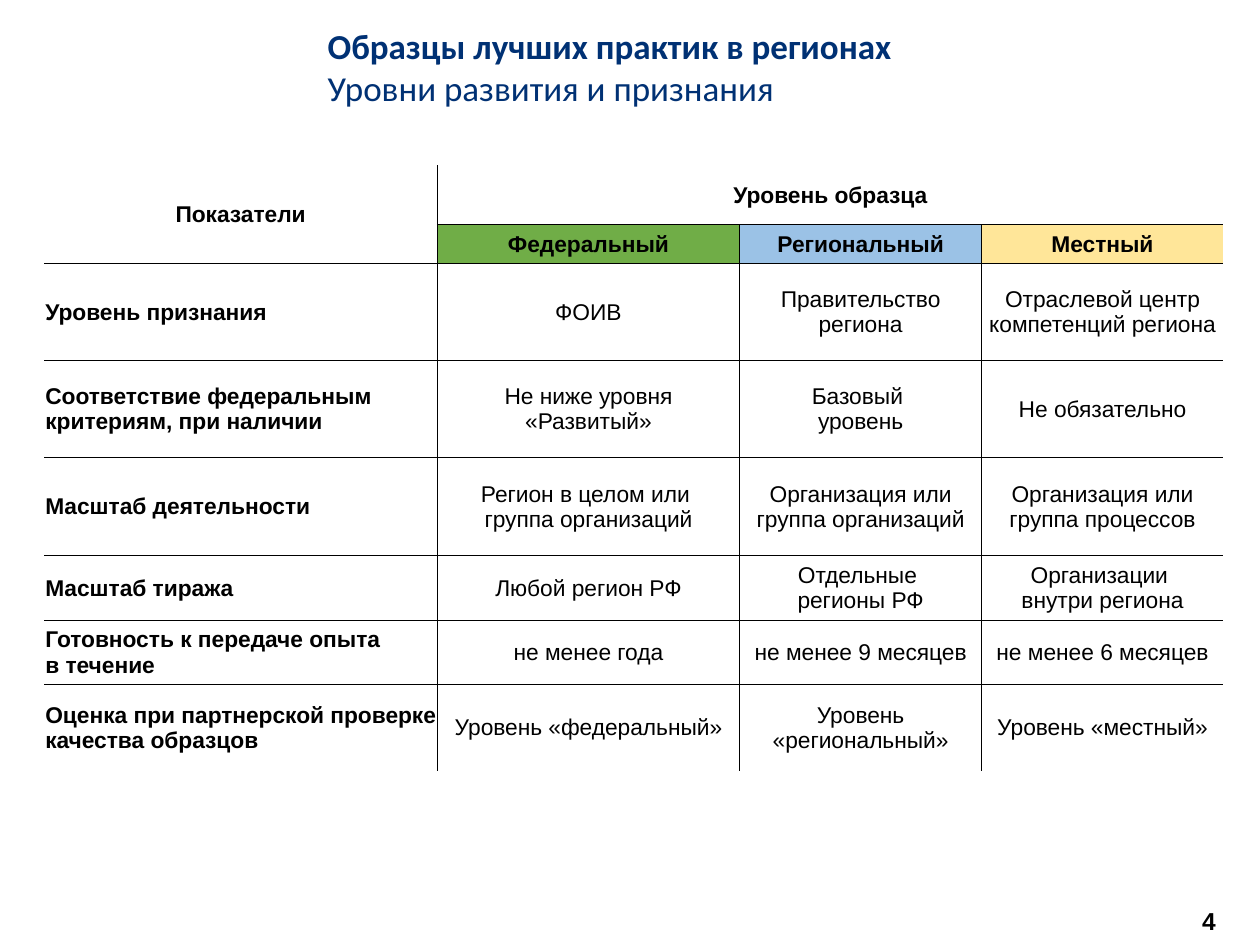
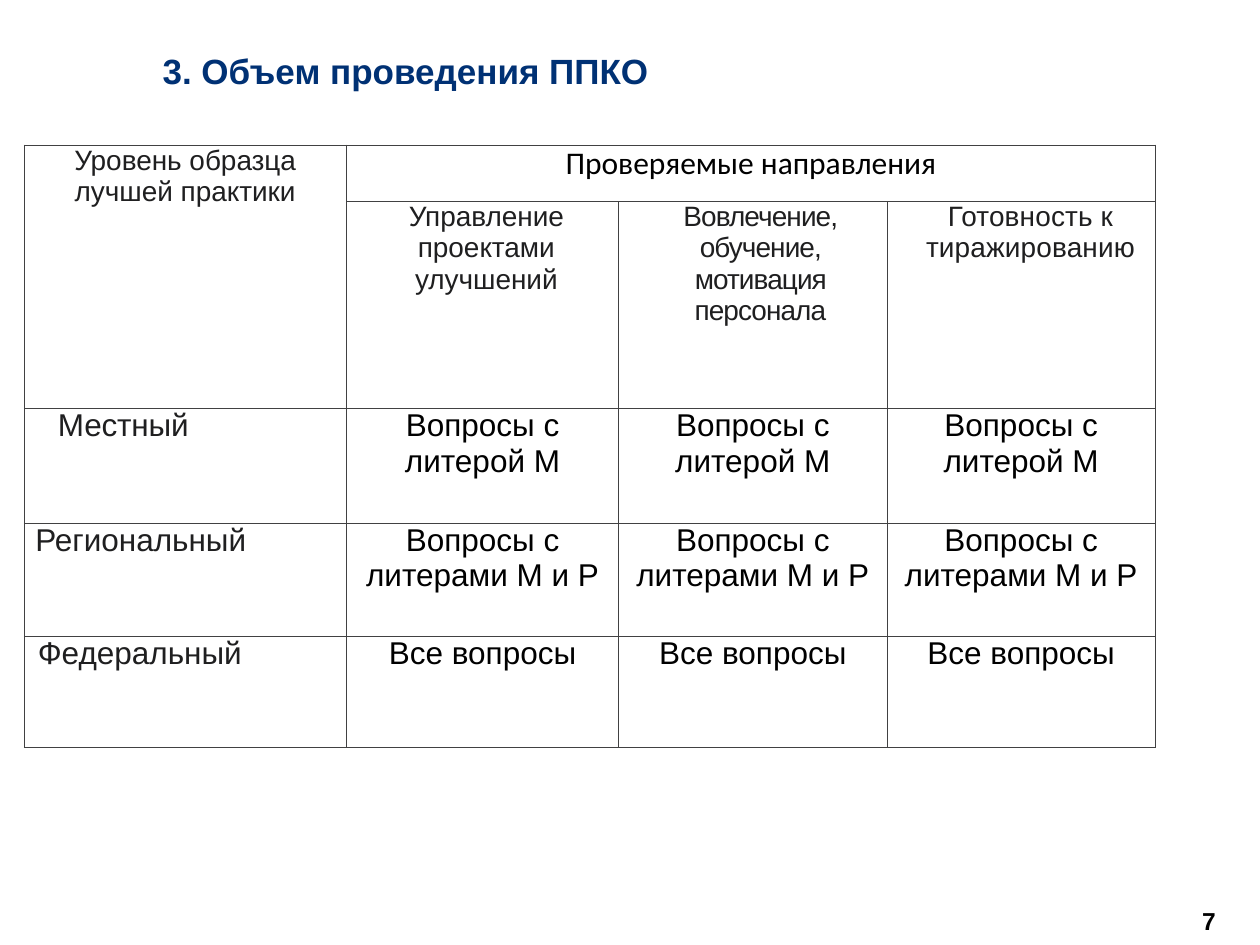
from dataclasses import dataclass, replace

from lxml.etree import SubElement
from pptx import Presentation
from pptx.dml.color import RGBColor
from pptx.enum.text import MSO_ANCHOR, MSO_AUTO_SIZE, PP_ALIGN
from pptx.oxml.ns import qn
from pptx.util import Inches, Pt

NAVY = RGBColor(0x00, 0x31, 0x74)
BLACK = RGBColor(0x00, 0x00, 0x00)
INK = RGBColor(0x1F, 0x1F, 0x20)
RULE = RGBColor(0x41, 0x41, 0x42)
GREEN = RGBColor(0x70, 0xAD, 0x47)
BLUE = RGBColor(0x9B, 0xC2, 0xE6)
YELLOW = RGBColor(0xFF, 0xE6, 0x99)
NO_GRID_STYLE = "{2D5ABB26-0587-4C30-8999-92F81FD0307C}"


@dataclass(frozen=True)
class Look:
    size: int
    color: RGBColor = BLACK
    bold: bool = False
    align: PP_ALIGN = PP_ALIGN.CENTER
    font: str = "Arial"
    left: float = 0
    indent: float = 0
    spacing: float = 0
    fill: RGBColor | None = None


class Deck:
    def __init__(self):
        self.prs = Presentation()
        self.prs.slide_width = Inches(10)
        self.prs.slide_height = Inches(7.5)
        self.slide = None

    def add_slide(self, number):
        self.slide = self.prs.slides.add_slide(self.prs.slide_layouts[5])
        self.page_number(number)

    def set_text(self, p, text, look):
        p.text = text
        p.alignment = look.align
        pPr = p._p.get_or_add_pPr()
        pPr.set("marL", str(Inches(look.left)))
        pPr.set("indent", str(Inches(look.indent)))
        font = p.font
        font.name = look.font
        font.size = Pt(look.size)
        font.bold = look.bold
        font.color.rgb = look.color
        if look.spacing:
            pPr.find(qn("a:defRPr")).set("spc", str(round(look.spacing * 100)))

    def set_margins(self, item, margins):
        (item.margin_left, item.margin_top,
         item.margin_right, item.margin_bottom) = map(Inches, margins)

    def place(self, sp, box):
        sp.left, sp.top, sp.width, sp.height = map(Inches, box)

    def title(self, box, lines, margins, anchor):
        sp = self.slide.shapes.title
        self.place(sp, box)
        tf = sp.text_frame
        tf.auto_size = MSO_AUTO_SIZE.NONE
        tf.word_wrap = True
        tf.vertical_anchor = anchor
        self.set_margins(tf, margins)
        for i, (text, look) in enumerate(lines):
            p = tf.add_paragraph() if i else tf.paragraphs[0]
            self.set_text(p, text, look)

    def page_number(self, number):
        box = map(Inches, (9.51, 7.19, 0.21, 0.24))
        tf = self.slide.shapes.add_textbox(*box).text_frame
        tf.word_wrap = True
        self.set_margins(tf, (0, 0, 0, 0))
        look = Look(14, bold=True, align=PP_ALIGN.LEFT, left=0.03, spacing=-0.1)
        self.set_text(tf.paragraphs[0], str(number), look)

    def border(self, cell, sides, color):
        tcPr = cell._tc.get_or_add_tcPr()
        for side in sides:
            ln = SubElement(tcPr, qn(f"a:ln{side}"), w=str(Pt(0.25)))
            fill = SubElement(ln, qn("a:solidFill"))
            SubElement(fill, qn("a:srgbClr"), val=str(color))

    def table(self, left, top, widths, heights, rows, margins, anchor, rule, framed):
        n_rows, n_cols = len(heights), len(widths)
        box = map(Inches, (left, top, sum(widths), sum(heights)))
        tbl = self.slide.shapes.add_table(n_rows, n_cols, *box).table
        tbl.first_row = tbl.horz_banding = False
        tbl._tbl.tblPr.find(qn("a:tableStyleId")).text = NO_GRID_STYLE
        for column, width in zip(tbl.columns, widths):
            column.width = Inches(width)
        for row, height in zip(tbl.rows, heights):
            row.height = Inches(height)
        tbl.cell(0, 0).merge(tbl.cell(1, 0))
        tbl.cell(0, 1).merge(tbl.cell(0, n_cols - 1))
        for r, row in enumerate(rows):
            for c, entry in enumerate(row):
                if entry is None:
                    continue
                text, look = entry
                cell = tbl.cell(r, c)
                self.set_margins(cell, margins)
                cell.vertical_anchor = anchor
                inner = {
                    "L": c > 0,
                    "R": c + cell.span_width < n_cols,
                    "T": r > 0,
                    "B": r + cell.span_height < n_rows,
                }
                sides = [s for s, inside in inner.items() if framed or inside]
                self.border(cell, sides, rule)
                if look.fill is None:
                    cell.fill.background()
                else:
                    cell.fill.solid()
                    cell.fill.fore_color.rgb = look.fill
                self.set_text(cell.text_frame.paragraphs[0], text, look)


def levels_slide(deck):
    deck.add_slide(4)
    heading = Look(20, NAVY, True, PP_ALIGN.LEFT, "Calibri")
    deck.title(
        (2.5, 0, 6.36, 1.05),
        [("Образцы лучших практик в регионах", heading),
         ("Уровни развития и признания", replace(heading, bold=False))],
        (0.1, 0.05, 0.1, 0.05), MSO_ANCHOR.MIDDLE)

    value = Look(13)
    head = replace(value, bold=True)
    label = replace(head, align=PP_ALIGN.LEFT)
    levels = [("Федеральный", GREEN), ("Региональный", BLUE), ("Местный", YELLOW)]
    indicators = [
        ("Уровень признания", "ФОИВ", "Правительство региона",
         "Отраслевой центр компетенций региона"),
        ("Соответствие федеральным критериям, при наличии",
         "Не ниже уровня «Развитый»", "Базовый \nуровень", "Не обязательно"),
        ("Масштаб деятельности", "Регион в целом или \nгруппа организаций",
         "Организация или группа организаций", "Организация или группа процессов"),
        ("Масштаб тиража", "Любой регион РФ", "Отдельные \nрегионы РФ",
         "Организации \nвнутри региона"),
        ("Готовность к передаче опыта \nв течение", "не менее года",
         "не менее 9 месяцев", "не менее 6 месяцев"),
        ("Оценка при партнерской проверке качества образцов",
         "Уровень «федеральный»", "Уровень «региональный»", "Уровень «местный»"),
    ]
    rows = [
        [("Показатели", head), ("Уровень образца", head), None, None],
        [None] + [(name, replace(head, fill=fill)) for name, fill in levels],
    ]
    for name, *values in indicators:
        rows.append([(name, label)] + [(v, value) for v in values])
    deck.table(
        0.35, 1.31, [3.12, 2.4, 1.92, 1.92],
        [0.47, 0.31, 0.77, 0.77, 0.78, 0.51, 0.51, 0.69],
        rows, (0.01, 0.01, 0.01, 0), MSO_ANCHOR.MIDDLE, BLACK, framed=False)


def scope_slide(deck):
    deck.add_slide(7)
    heading = Look(20, NAVY, True, PP_ALIGN.LEFT, left=0.1)
    deck.title((1.19, 0.22, 7.61, 0.5), [("3. Объем проведения ППКО", heading)],
               (0, 0.17, 0, 0), MSO_ANCHOR.TOP)

    head = Look(16, INK)
    question = Look(18)
    label = Look(18, INK, align=PP_ALIGN.LEFT, spacing=-0.1)
    rows = [
        [("Уровень образца лучшей практики", head),
         ("Проверяемые направления", replace(question, font="Calibri")), None, None],
        [None,
         ("Управление проектами улучшений", replace(head, left=0.06)),
         ("Вовлечение, обучение, мотивация персонала",
          replace(head, left=0.12, spacing=-0.5)),
         ("Готовность к тиражированию", replace(head, left=0.15, spacing=0.1))],
    ]
    scopes = [
        ("Местный", replace(label, left=0.27), "Вопросы с литерой М"),
        ("Региональный", replace(label, left=0.58, indent=-0.49, spacing=0),
         "Вопросы с литерами М и Р"),
        ("Федеральный", replace(label, left=0.25, indent=-0.14, spacing=0),
         "Все вопросы"),
    ]
    for name, look, scope in scopes:
        rows.append([(name, look)] + [(scope, question)] * 3)
    deck.table(
        0.19, 1.15, [2.56, 2.16, 2.13, 2.13], [0.45, 1.64, 0.91, 0.9, 0.88],
        rows, (0, 0, 0, 0), MSO_ANCHOR.TOP, RULE, framed=True)


def main():
    deck = Deck()
    levels_slide(deck)
    scope_slide(deck)
    deck.prs.save("out.pptx")


if __name__ == "__main__":
    main()
